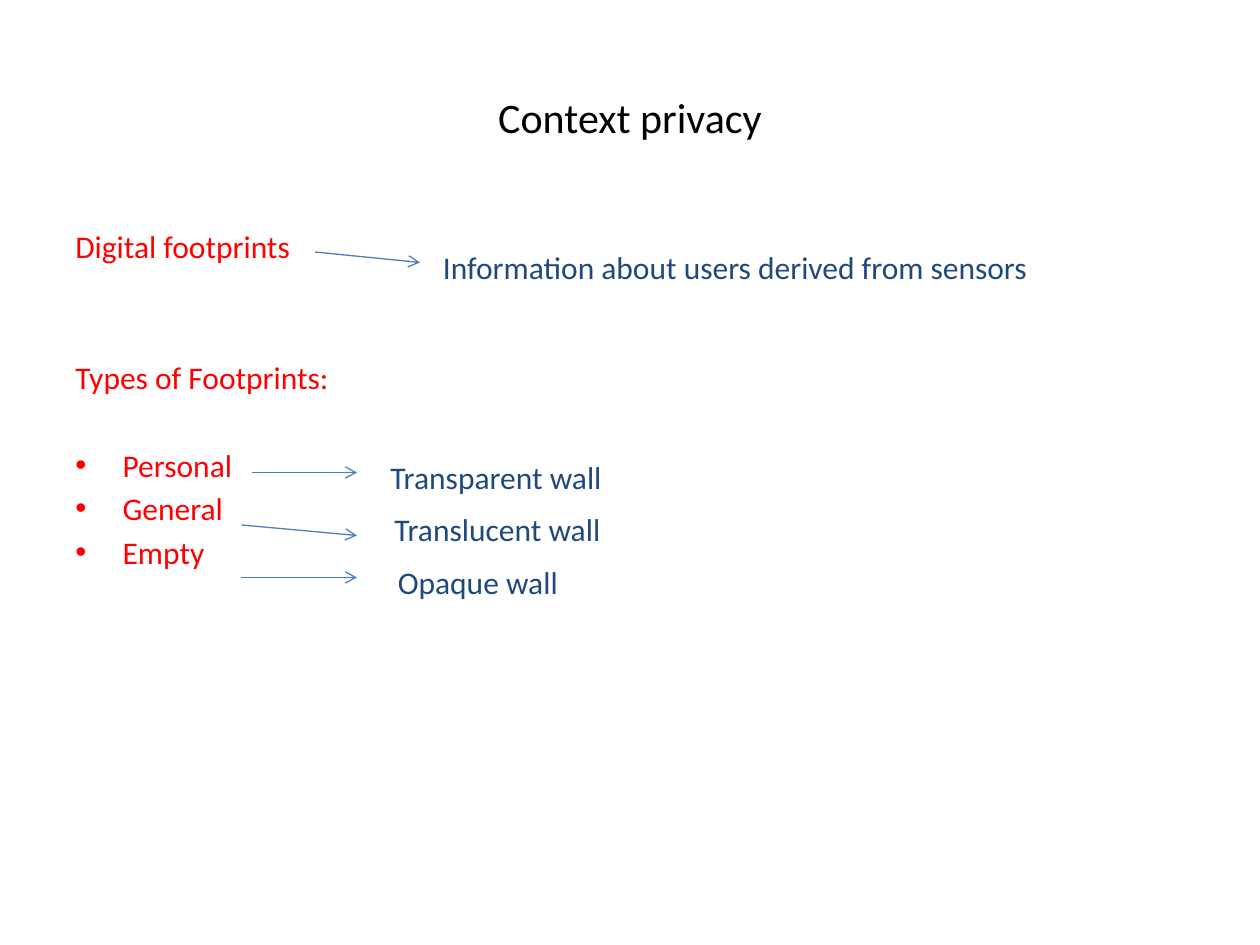
from lxml import etree
from pptx import Presentation
from pptx.dml.color import RGBColor
from pptx.enum.shapes import MSO_CONNECTOR
from pptx.enum.text import MSO_ANCHOR, PP_ALIGN
from pptx.oxml.ns import qn
from pptx.util import Pt

LEFT, CENTER = PP_ALIGN.LEFT, PP_ALIGN.CENTER
TOP, MIDDLE = MSO_ANCHOR.TOP, MSO_ANCHOR.MIDDLE
STRAIGHT = MSO_CONNECTOR.STRAIGHT
BLACK = RGBColor(0x00, 0x00, 0x00)
RED = RGBColor(0xFF, 0x00, 0x00)
NAVY = RGBColor(0x1F, 0x49, 0x7D)
BLUE = RGBColor(0x4B, 0x7E, 0xBC)

deck = Presentation()
deck.slide_width, deck.slide_height = Pt(720), Pt(540)
slide = deck.slides.add_slide(deck.slide_layouts[6])


def write(frame, text, size=18, color=NAVY, align=LEFT, before=0, bullet=False):
    """Write a paragraph, using the first one while the frame is empty."""
    para = frame.add_paragraph() if frame.text else frame.paragraphs[0]
    para.alignment = align
    para.space_before = Pt(before)
    run = para.add_run()
    run.text = text
    run.font.name = "Calibri"
    run.font.size = Pt(size)
    run.font.color.rgb = color
    if bullet:
        props = para._p.get_or_add_pPr()
        props.set("marL", str(Pt(27)))
        props.set("indent", str(Pt(-27)))
        etree.SubElement(props, qn("a:buFont"), typeface="Arial")
        etree.SubElement(props, qn("a:buChar"), char="•")


def box(left, top, width, height, anchor=TOP, inset=7.2):
    """Add a wrapping text box and return its frame."""
    frame = slide.shapes.add_textbox(Pt(left), Pt(top), Pt(width), Pt(height)).text_frame
    frame.word_wrap = True
    frame.vertical_anchor = anchor
    frame.margin_left = Pt(inset)
    return frame


# Title
write(box(36, 21.6, 648, 90, MIDDLE), "Context privacy", size=24, color=BLACK, align=CENTER)

# Terms on the left; a skipped line is one pitch of extra space
GAP, PITCH = 3.2, 25.2
terms = box(36, 126, 354, 354)
for text, skip, bullet in [
    ("Digital footprints", 0, False),
    ("Types of Footprints:", 2, False),
    ("Personal", 1, True),
    ("General", 0, True),
    ("Empty", 0, True),
]:
    before = GAP + skip * PITCH
    write(terms, text, color=RED, before=before, bullet=bullet)

# Meanings on the right
for text, left, top, width, inset in [
    ("Information about users derived from sensors", 246, 138, 358, 7.2),
    ("Transparent wall", 216, 258, 160, 7.2),
    ("Translucent wall", 210, 288, 142, 15.3),
    ("Opaque wall", 216, 318, 112, 11.3),
]:
    write(box(left, top, width, 29, inset=inset), text)

# Arrows from term to meaning
for x1, y1, x2, y2 in [
    (180, 144, 240, 150),
    (144, 270, 204, 270),
    (138, 300, 204, 306),
    (138, 330, 204, 330),
]:
    arrow = slide.shapes.add_connector(STRAIGHT, Pt(x1), Pt(y1), Pt(x2), Pt(y2))
    arrow.line.color.rgb = BLUE
    arrow.line.width = Pt(0.75)
    etree.SubElement(arrow.line._get_or_add_ln(), qn("a:tailEnd"), type="arrow")
    etree.SubElement(arrow._element.spPr, qn("a:effectLst"))

deck.save("out.pptx")
